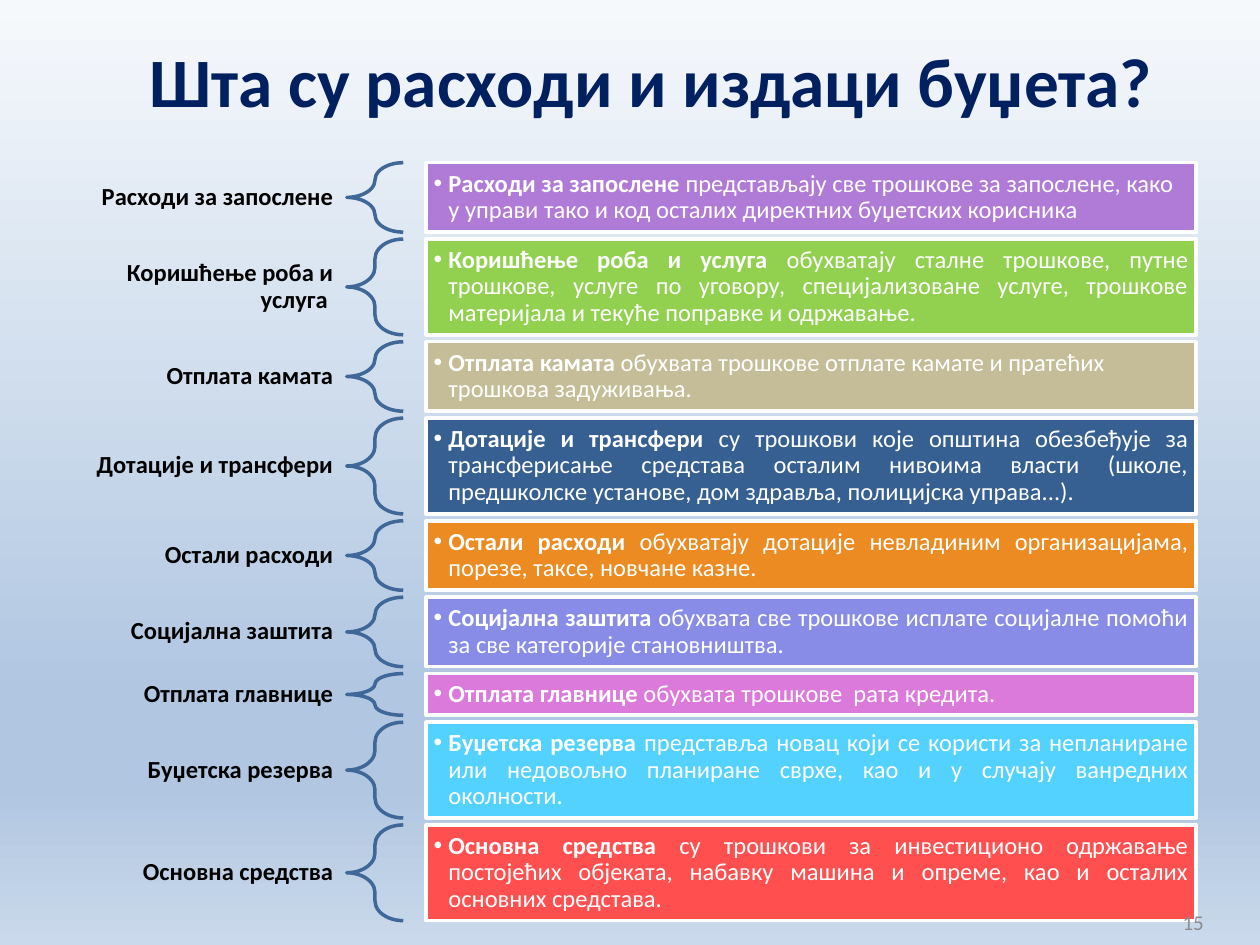
from lxml.etree import SubElement
from pptx import Presentation
from pptx.dml.color import RGBColor
from pptx.enum.shapes import MSO_SHAPE
from pptx.enum.text import MSO_ANCHOR, MSO_AUTO_SIZE, PP_ALIGN
from pptx.oxml.ns import qn
from pptx.util import Cm, Pt

TITLE = "Шта су расходи и издаци буџета?"
PAGE = "15"
L, J = PP_ALIGN.LEFT, PP_ALIGN.JUSTIFY

# label, description, fill, lines in the box, lines in the label, alignment
ROWS = [
    ("Расходи за запослене", "представљају све трошкове за запослене, како у управи тако и код осталих директних буџетских корисника", "B07BD7", 2, 1, L),
    ("Коришћење роба и услуга ", "обухватају сталне трошкове, путне трошкове, услуге по уговору, специјализоване услуге, трошкове материјала и текуће поправке и одржавање.", "92D050", 3, 2, J),
    ("Отплата камата", "обухвата трошкове отплате камате и пратећих трошкова задуживања.", "C4BD97", 2, 1, L),
    ("Дотације и трансфери", "су трошкови које општина обезбеђује за трансферисање средстава осталим нивоима власти (школе, предшколске установе, дом здравља, полицијска управа...).", "376092", 3, 1, J),
    ("Остали расходи", "обухватају дотације невладиним организацијама, порезе, таксе, новчане казне.", "EB8B21", 2, 1, J),
    ("Социјална заштита", "обухвата све трошкове исплате социјалне помоћи за све категорије становништва.", "888CE6", 2, 1, J),
    ("Отплата главнице", "обухвата трошкове  рата кредита.", "DC7ADC", 1, 1, L),
    ("Буџетска резерва", "представља новац који се користи за непланиране или недовољно планиране сврхе, као и у случају ванредних околности.", "53D2FF", 3, 1, J),
    ("Основна средства", "су трошкови за инвестиционо одржавање постојећих објеката, набавку машина и опреме, као и осталих основних средстава.", "FF4F4F", 3, 1, J),
]

THEME = {
    "font": "Calibri",
    "title": "002060", "label": "000000", "text": "FFFFFF",
    "brace": "3F6797", "page": "8C8C8C",
    "title_size": 39.6, "text_size": 14, "page_size": 12, "line": 2,
    "background": [(0, "F6F9FC"), (74, "B0C6E1"), (83, "B0C6E1"), (100, "CAD9EB")],
}

TOP, GAP = 3.28, 0.14
BOX_HEIGHT = {1: 0.84, 2: 1.4, 3: 1.93}
LABEL_HEIGHT = {1: 0.76, 2: 1.3}
LABEL_X, LABEL_W = 1.27, 5.72
BRACE_X, BRACE_W = 6.99, 1.14
BOX_X, BOX_W = 8.59, 15.52


def paint_background(s):
    fill = s.background.fill
    fill.gradient()
    fill.gradient_angle = 270
    stops = s._element.find(".//" + qn("a:gsLst"))
    for stop in list(stops):
        stops.remove(stop)
    for pos, color in THEME["background"]:
        gs = SubElement(stops, qn("a:gs"), pos=str(pos * 1000))
        SubElement(gs, qn("a:srgbClr"), val=color)


def set_frame(tf, inset_x, inset_y):
    tf.word_wrap = True
    tf.auto_size = MSO_AUTO_SIZE.NONE
    tf.vertical_anchor = MSO_ANCHOR.MIDDLE
    tf.margin_left = tf.margin_right = Cm(inset_x)
    tf.margin_top = tf.margin_bottom = Cm(inset_y)


def add_run(p, text, size, color, bold=False):
    r = p.add_run()
    r.text = text
    r.font.name = THEME["font"]
    r.font.size = Pt(size)
    r.font.bold = bold
    r.font.color.rgb = RGBColor.from_string(color)


def add_text(s, text, box, align, size, color, bold=False, spacing=None):
    sp = s.shapes.add_textbox(*map(Cm, box))
    set_frame(sp.text_frame, 0.27, 0.1)
    p = sp.text_frame.paragraphs[0]
    p.alignment = align
    p.line_spacing = spacing
    add_run(p, text, size, color, bold)


def add_shape(s, kind, box, line):
    sp = s.shapes.add_shape(kind, *map(Cm, box))
    sp.shadow.inherit = False
    sp.line.color.rgb = RGBColor.from_string(line)
    sp.line.width = Pt(THEME["line"])
    return sp


def add_bullet(p):
    pPr = p._p.get_or_add_pPr()
    pPr.set("marL", str(Cm(0.3)))
    pPr.set("indent", str(-Cm(0.3)))
    SubElement(pPr, qn("a:buFont"), typeface="Arial")
    SubElement(pPr, qn("a:buChar"), char="•")


def add_row(s, y, row):
    label, description, color, lines, label_lines, align = row
    h, label_h = BOX_HEIGHT[lines], LABEL_HEIGHT[label_lines]
    size = THEME["text_size"]
    add_text(s, label, (LABEL_X, y + (h - label_h) / 2, LABEL_W, label_h),
             PP_ALIGN.RIGHT, size, THEME["label"], True, 0.9)

    brace = add_shape(s, MSO_SHAPE.LEFT_BRACE, (BRACE_X, y, BRACE_W, h), THEME["brace"])
    brace.fill.background()
    brace.adjustments[0] = 0.35
    brace.adjustments[1] = 0.5

    sp = add_shape(s, MSO_SHAPE.RECTANGLE, (BOX_X, y, BOX_W, h), THEME["text"])
    sp.fill.solid()
    sp.fill.fore_color.rgb = RGBColor.from_string(color)
    set_frame(sp.text_frame, 0.15, 0.15)
    p = sp.text_frame.paragraphs[0]
    p.alignment = align
    p.line_spacing = 0.9
    add_bullet(p)
    add_run(p, label.strip() + " ", size, THEME["text"], True)
    add_run(p, description, size, THEME["text"])
    return y + h + GAP


def main():
    prs = Presentation()
    prs.slide_width, prs.slide_height = Cm(25.4), Cm(19.05)
    s = prs.slides.add_slide(prs.slide_layouts[5])
    paint_background(s)

    title = s.shapes.title
    title.left, title.top, title.width, title.height = map(Cm, (1.7, 0.74, 22.86, 1.73))
    set_frame(title.text_frame, 0.25, 0.13)
    p = title.text_frame.paragraphs[0]
    p.alignment = PP_ALIGN.CENTER
    add_run(p, TITLE, THEME["title_size"], THEME["title"], True)

    y = TOP
    for row in ROWS:
        y = add_row(s, y, row)

    add_text(s, PAGE, (18.62, 18.08, 5.92, 1.02), PP_ALIGN.RIGHT,
             THEME["page_size"], THEME["page"])
    prs.save("out.pptx")


if __name__ == "__main__":
    main()
